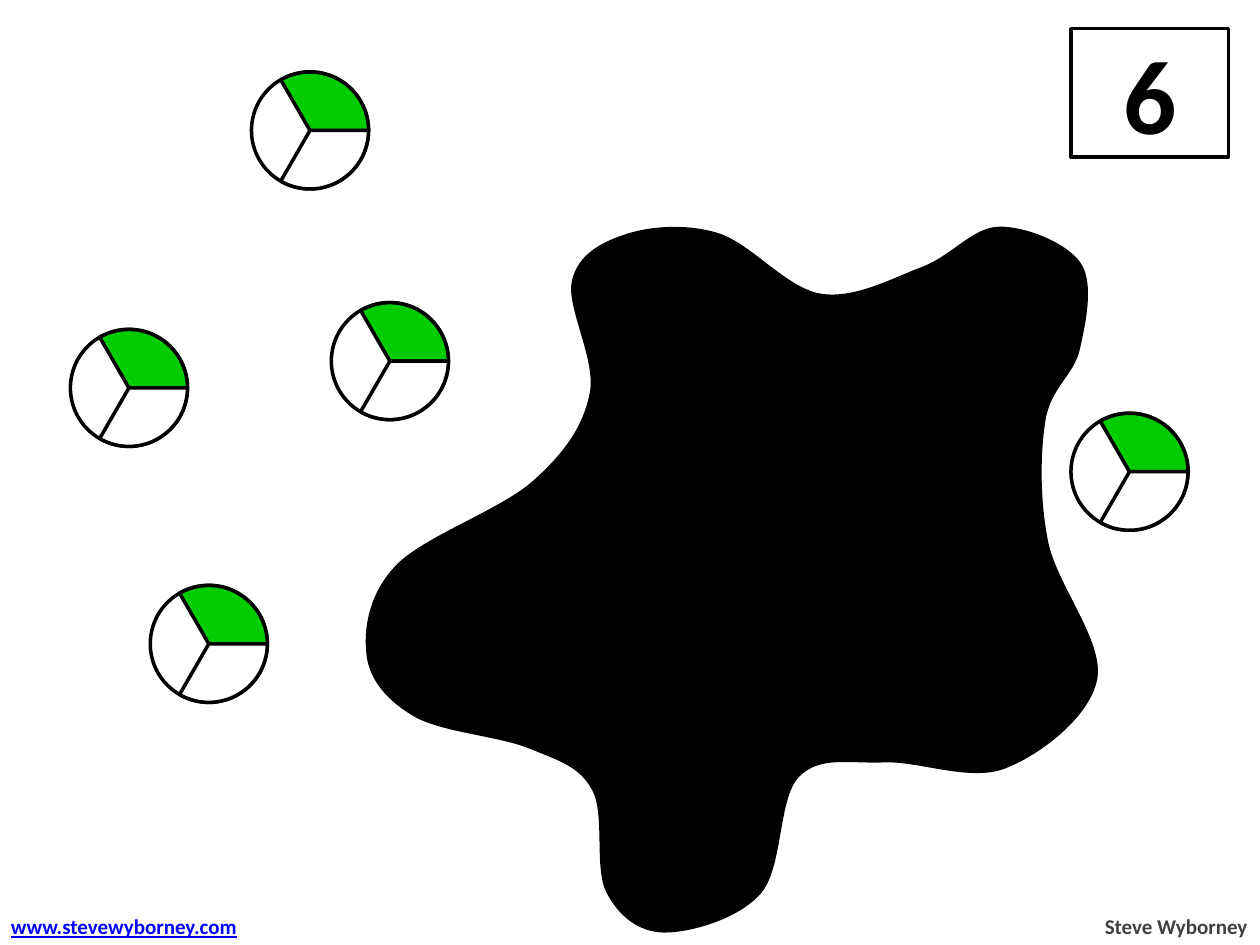
"""Build the estimation slide with thirds circles around an ink blot."""
from dataclasses import dataclass

from lxml.etree import SubElement
from pptx import Presentation
from pptx.dml.color import RGBColor
from pptx.enum.shapes import MSO_SHAPE
from pptx.enum.text import MSO_ANCHOR, MSO_AUTO_SIZE, PP_ALIGN
from pptx.oxml.ns import qn
from pptx.util import Cm, Pt


@dataclass(frozen=True)
class Theme:
    """Colours, font and sizes of the slide."""

    ink: RGBColor = RGBColor(0, 0, 0)
    paper: RGBColor = RGBColor(255, 255, 255)
    green: RGBColor = RGBColor(0x00, 0xCC, 0x00)
    grey: RGBColor = RGBColor(0x40, 0x40, 0x40)
    link: RGBColor = RGBColor(0, 0, 255)
    font: str = "Calibri"
    number_size: Pt = Pt(60)
    footer_size: Pt = Pt(12)
    line_width: Pt = Pt(2)


THEME = Theme()
CIRCLE_SIZE = 2.36
THIRD_OF_TURN = 72
CIRCLE_CORNERS = [(21.59, 8.33), (5.07, 1.45), (3.03, 11.8), (1.42, 6.64), (6.68, 6.1)]
BLOT_ANCHORS = [
    (8.36, 14.45), (7.39, 13.21), (7.98, 11.4), (10.74, 9.7),
    (11.89, 7.92), (11.53, 5.66), (12.62, 4.72), (14.48, 4.7),
    (16.54, 5.92), (18.59, 5.38), (20.14, 4.57), (21.79, 5.31),
    (21.77, 7.04), (21.08, 8.46), (21.13, 10.92), (22.12, 13.69),
    (20.27, 15.49), (17.83, 15.37), (16.1, 15.67), (15.34, 18.01),
    (13.39, 18.8), (12.22, 17.98), (11.94, 15.93), (10.67, 15.09),
]


def add_outlined(shapes, kind, left, top, width, height, fill):
    """Add a filled preset shape with a black outline."""
    shape = shapes.add_shape(kind, Cm(left), Cm(top), Cm(width), Cm(height))
    shape.shadow.inherit = False
    shape.fill.solid()
    shape.fill.fore_color.rgb = fill
    shape.line.color.rgb = THEME.ink
    shape.line.width = THEME.line_width
    return shape


def add_thirds_circle(slide, left, top):
    """Add a grouped circle with one of its thirds coloured."""
    shapes = slide.shapes.add_group_shape().shapes
    place = (left, top, CIRCLE_SIZE, CIRCLE_SIZE)
    add_outlined(shapes, MSO_SHAPE.OVAL, *place, THEME.paper)
    for rotation, fill in ((240, THEME.green), (0, THEME.paper)):
        third = add_outlined(shapes, MSO_SHAPE.PIE, *place, fill)
        third.adjustments[0] = 0
        third.adjustments[1] = THIRD_OF_TURN
        third.rotation = rotation


def curve_handles(before, start, end, after):
    """Return the two Bezier handles of a Catmull-Rom segment."""
    first = [s + (e - b) / 6 for b, s, e in zip(before, start, end)]
    second = [e - (a - s) / 6 for s, e, a in zip(start, end, after)]
    return first, second


def round_corners(freeform):
    """Turn the straight sides of a closed freeform into smooth curves."""
    sides = list(freeform.element.iter(qn("a:lnTo")))
    ends = [(int(side[0].get("x")), int(side[0].get("y"))) for side in sides]
    count = len(ends)
    for index, side in enumerate(sides):
        neighbours = [ends[(index + offset) % count] for offset in (-2, -1, 0, 1)]
        curve = side.makeelement(qn("a:cubicBezTo"))
        for x, y in (*curve_handles(*neighbours), ends[index]):
            SubElement(curve, qn("a:pt"), x=str(round(x)), y=str(round(y)))
        side.getparent().replace(side, curve)


def add_blot(slide):
    """Add the black ink blot."""
    start, *rest = [(Cm(x), Cm(y)) for x, y in BLOT_ANCHORS]
    builder = slide.shapes.build_freeform(*start)
    builder.add_line_segments([*rest, start], close=True)
    blot = builder.convert_to_shape()
    round_corners(blot)
    blot.shadow.inherit = False
    blot.fill.solid()
    blot.fill.fore_color.rgb = THEME.ink
    blot.line.fill.background()


def write_text(frame, text, size, color, alignment):
    """Write one bold paragraph and return its run."""
    frame.text = text
    paragraph = frame.paragraphs[0]
    paragraph.alignment = alignment
    run = paragraph.runs[0]
    run.font.name = THEME.font
    run.font.size = size
    run.font.bold = True
    run.font.color.rgb = color
    return run


def add_number_box(slide, number):
    """Add the outlined box with the slide's number."""
    box = add_outlined(slide.shapes, MSO_SHAPE.RECTANGLE, 21.59, 0.58, 3.18, 2.59, THEME.paper)
    box.text_frame.vertical_anchor = MSO_ANCHOR.MIDDLE
    write_text(box.text_frame, number, THEME.number_size, THEME.ink, PP_ALIGN.CENTER)


def add_footer(slide, text, left, width, color, alignment):
    """Add a footer line and return its run."""
    footer = slide.shapes.add_textbox(Cm(left), Cm(18.29), Cm(width), Cm(0.76))
    footer.text_frame.word_wrap = False
    footer.text_frame.auto_size = MSO_AUTO_SIZE.SHAPE_TO_FIT_TEXT
    return write_text(footer.text_frame, text, THEME.footer_size, color, alignment)


def main():
    """Build and save the slide."""
    presentation = Presentation()
    presentation.slide_width = Cm(25.4)
    presentation.slide_height = Cm(19.05)
    slide = presentation.slides.add_slide(presentation.slide_layouts[6])
    add_blot(slide)
    add_number_box(slide, "6")
    add_footer(slide, "Steve Wyborney", 22, 3.4, THEME.grey, PP_ALIGN.RIGHT)
    address = add_footer(slide, "www.stevewyborney.com", -0.03, 5.21, THEME.link, PP_ALIGN.LEFT)
    address.font.underline = True
    for left, top in CIRCLE_CORNERS:
        add_thirds_circle(slide, left, top)
    presentation.save("out.pptx")


if __name__ == "__main__":
    main()
